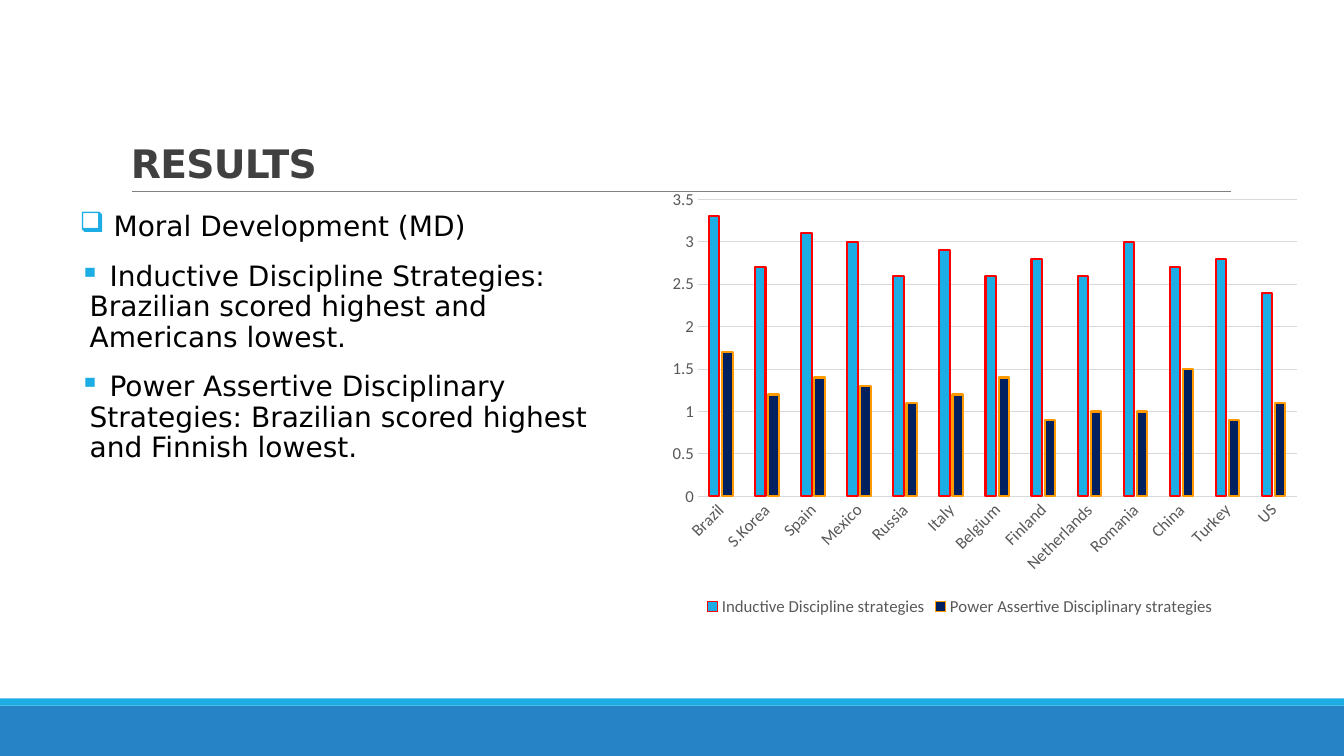
from dataclasses import dataclass

import pptx
import pptx.chart.data
import pptx.dml.color
import pptx.enum.chart
import pptx.enum.shapes
import pptx.enum.text
import pptx.oxml
import pptx.oxml.ns
import pptx.util
from pptx.util import Cm, Pt

RGBColor = pptx.dml.color.RGBColor
BLUE = RGBColor(0x26, 0x83, 0xC6)
CYAN = RGBColor(0x1C, 0xAD, 0xE4)
NAVY = RGBColor(0x00, 0x20, 0x60)
RED = RGBColor(0xFF, 0x00, 0x00)
ORANGE = RGBColor(0xFF, 0x99, 0x00)
BLACK = RGBColor(0x00, 0x00, 0x00)
DARK = RGBColor(0x40, 0x40, 0x40)
SLATE = RGBColor(0x59, 0x59, 0x59)
GRAY = RGBColor(0x80, 0x80, 0x80)
PALE = RGBColor(0xD9, 0xD9, 0xD9)

WIDE, HIGH = Cm(33.87), Cm(19.05)
SANS = "DejaVu Sans"


@dataclass(frozen=True)
class Band:
    top: float
    height: float
    color: RGBColor


@dataclass(frozen=True)
class Point:
    mark: str
    text: str


@dataclass(frozen=True)
class Series:
    name: str
    values: tuple[float, ...]
    fill: RGBColor
    edge: RGBColor


BANDS = (Band(17.78, 1.27, BLUE), Band(17.6, 0.18, CYAN))
POINTS = (
    Point("❑", " Moral Development (MD)"),
    Point("▪", " Inductive Discipline Strategies: Brazilian scored highest and Americans lowest."),
    Point("▪", " Power Assertive Disciplinary Strategies: Brazilian scored highest and Finnish lowest."),
)
LANDS = ("Brazil", "S.Korea", "Spain", "Mexico", "Russia", "Italy", "Belgium",
         "Finland", "Netherlands", "Romania", "China", "Turkey", "US")
SERIES = (
    Series("Inductive Discipline strategies",
           (3.3, 2.7, 3.1, 3, 2.6, 2.9, 2.6, 2.8, 2.6, 3, 2.7, 2.8, 2.4), CYAN, RED),
    Series("Power Assertive Disciplinary strategies",
           (1.7, 1.2, 1.4, 1.3, 1.1, 1.2, 1.4, 0.9, 1, 1, 1.5, 0.9, 1.1), NAVY, ORANGE),
)


def make_node(text: str):
    """Parse XML text that may use the a: and c: prefixes."""
    head, tail = text.split(">", 1) if not text.endswith("/>") else (text[:-2], None)
    names = pptx.oxml.ns.nsdecls("a", "c")
    return pptx.oxml.parse_xml(f"{head} {names}/>" if tail is None else f"{head} {names}>{tail}")


def style_font(font, size: float, color: RGBColor, face: str) -> None:
    font.size, font.name = Pt(size), face
    font.color.rgb = color


def style_line(line, color: RGBColor, width: float) -> None:
    line.color.rgb = color
    line.width = Pt(width)


def draw_band(slide, band: Band) -> None:
    shape = slide.shapes.add_shape(pptx.enum.shapes.MSO_SHAPE.RECTANGLE,
                                   0, Cm(band.top), WIDE, Cm(band.height))
    shape.shadow.inherit = False
    shape.fill.solid()
    shape.fill.fore_color.rgb = band.color
    shape.line.fill.background()


def draw_rule(slide) -> None:
    rule = slide.shapes.add_connector(pptx.enum.shapes.MSO_CONNECTOR.STRAIGHT,
                                      Cm(3.33), Cm(4.83), Cm(31.01), Cm(4.83))
    style_line(rule.line, GRAY, 0.5)
    rule._element.spPr.append(make_node("<a:effectLst/>"))


def draw_title(slide) -> None:
    frame = slide.shapes.add_textbox(Cm(3.05), Cm(0.79), Cm(8.76), Cm(4.04)).text_frame
    frame.word_wrap = True
    frame.vertical_anchor = pptx.enum.text.MSO_ANCHOR.BOTTOM
    para = frame.paragraphs[0]
    para.line_spacing = 0.85
    run = para.add_run()
    run.text = "RESULTS"
    style_font(run.font, 28, DARK, SANS)
    run.font.bold = True
    run._r.get_or_add_rPr().set("spc", "-50")


def draw_points(slide, points: tuple[Point, ...]) -> None:
    frame = slide.shapes.add_textbox(Cm(2.01), Cm(5.23), Cm(13.72), Cm(11.18)).text_frame
    frame.word_wrap = True
    frame.margin_left = frame.margin_right = 0
    for index, point in enumerate(points):
        para = frame.add_paragraph() if index else frame.paragraphs[0]
        para.line_spacing = 0.9
        para.space_before, para.space_after = Pt(12), Pt(2)
        props = para._p.get_or_add_pPr()
        props.set("marL", str(Cm(0.25)))
        props.set("indent", str(-Cm(0.25)))
        props.append(make_node(f'<a:buClr><a:srgbClr val="{CYAN}"/></a:buClr>'))
        props.append(make_node(f'<a:buChar char="{point.mark}"/>'))
        run = para.add_run()
        run.text = point.text
        style_font(run.font, 20, BLACK, SANS)


def place_plot(chart, left: float, top: float, width: float, height: float) -> None:
    """Fix the inner plot area, in fractions of the chart."""
    area = chart._chartSpace.chart.plotArea
    for old in area.findall(pptx.oxml.ns.qn("c:layout")):
        area.remove(old)
    sides = "".join(f'<c:{key} val="{val}"/>' for key, val in
                    (("x", left), ("y", top), ("w", width), ("h", height)))
    area.insert(0, make_node(
        '<c:layout><c:manualLayout><c:layoutTarget val="inner"/>'
        f'<c:xMode val="edge"/><c:yMode val="edge"/>{sides}</c:manualLayout></c:layout>'))


def draw_chart(slide, lands: tuple[str, ...], series: tuple[Series, ...]) -> None:
    kinds = pptx.enum.chart
    data = pptx.chart.data.CategoryChartData()
    data.categories = lands
    for item in series:
        data.add_series(item.name, item.values)
    chart = slide.shapes.add_chart(kinds.XL_CHART_TYPE.COLUMN_CLUSTERED, Cm(15.72), Cm(2.03),
                                   Cm(16.97), Cm(13.61), data).chart
    style_font(chart.font, 10, BLACK, "Calibri")
    chart.has_title = False
    chart.has_legend = True
    chart.legend.position = kinds.XL_LEGEND_POSITION.BOTTOM
    chart.legend.include_in_layout = False
    style_font(chart.legend.font, 12, SLATE, "Calibri")

    plot = chart.plots[0]
    plot.gap_width, plot.overlap = 219, -27
    plot.vary_by_categories = False
    for bars, item in zip(plot.series, series):
        bars.format.fill.solid()
        bars.format.fill.fore_color.rgb = item.fill
        style_line(bars.format.line, item.edge, 1.5)

    base, scale = chart.category_axis, chart.value_axis
    for axis in (base, scale):
        axis.major_tick_mark = axis.minor_tick_mark = kinds.XL_TICK_MARK.NONE
        style_font(axis.tick_labels.font, 12, SLATE, "Calibri")
    style_line(base.format.line, PALE, 0.75)
    base._element.txPr.bodyPr.set("rot", str(-45 * 60000))
    scale.minimum_scale, scale.maximum_scale, scale.major_unit = 0, 3.5, 0.5
    scale.format.line.fill.background()
    style_line(scale.major_gridlines.format.line, PALE, 0.75)
    place_plot(chart, 0.11, 0.22, 0.89, 0.55)


def main() -> None:
    deck = pptx.Presentation()
    deck.slide_width, deck.slide_height = WIDE, HIGH
    slide = deck.slides.add_slide(deck.slide_layouts[6])
    for band in BANDS:
        draw_band(slide, band)
    draw_rule(slide)
    draw_title(slide)
    draw_chart(slide, LANDS, SERIES)
    draw_points(slide, POINTS)
    deck.save("out.pptx")


if __name__ == "__main__":
    main()
